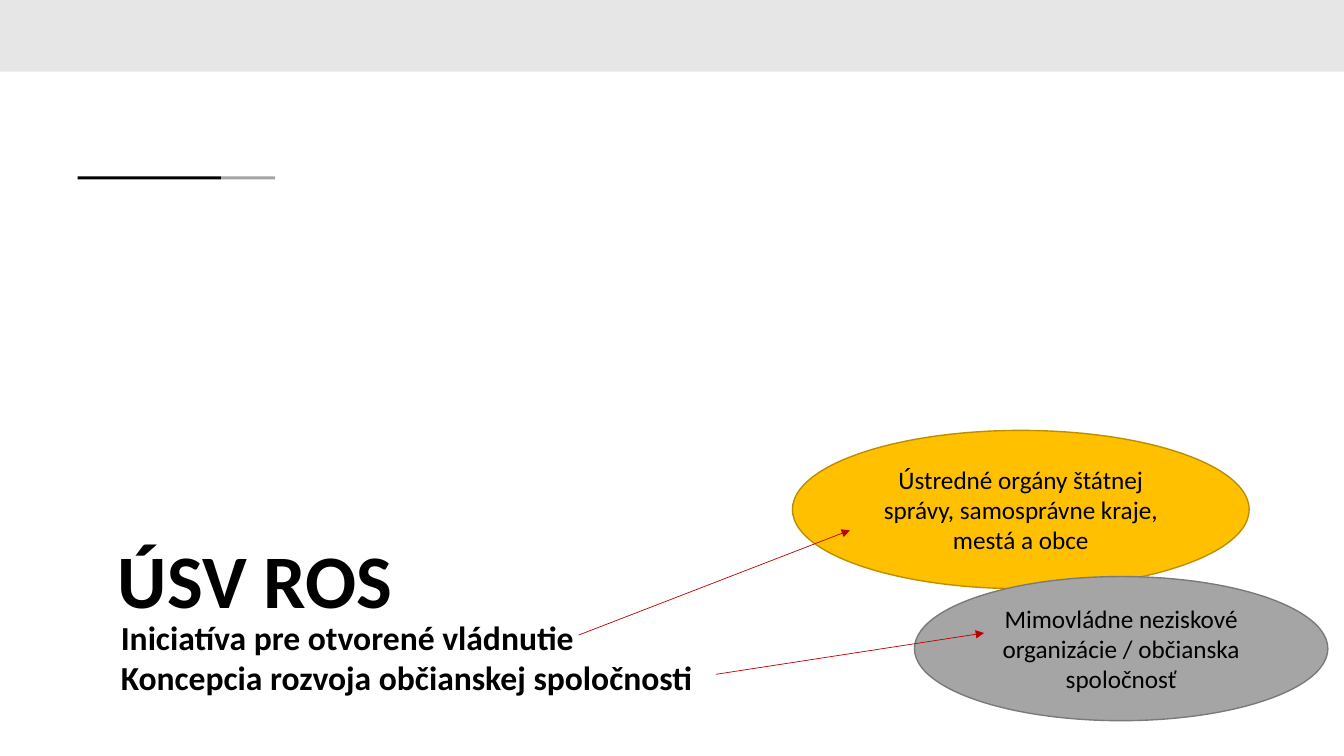
from lxml import etree
from pptx import Presentation
from pptx import util as u
from pptx.dml.color import RGBColor
from pptx.enum import shapes, text
from pptx.oxml.ns import qn

BLACK, GREY, PALE = "000000", "A5A5A5", "E7E6E6"
AMBER, RED = "FFC000", "C00000"


def color(value):
    return RGBColor.from_string(value)


def write(frame, lines, size, bold=False, align=text.PP_ALIGN.LEFT, spacing=None,
          font="Calibri", ink=BLACK):
    """Fill a text frame with one paragraph per line."""
    frame.word_wrap = True
    for index, line in enumerate(lines):
        para = frame.paragraphs[0] if index == 0 else frame.add_paragraph()
        para.alignment = align
        if spacing:
            para.line_spacing = spacing
        span = para.add_run()
        span.text = line
        span.font.name = font
        span.font.size = u.Pt(size)
        span.font.bold = bold
        span.font.color.rgb = color(ink)


class SlideBuilder:
    """Holds the line widths and the page being drawn."""

    outline_width = u.Pt(1)
    arrow_width = u.Pt(0.5)

    def __init__(self, page):
        self.page = page

    def shape(self, kind, left, top, width, height, fill, outline=None):
        shape = self.page.shapes.add_shape(
            kind, u.Inches(left), u.Inches(top), u.Inches(width), u.Inches(height))
        shape.shadow.inherit = False
        shape.fill.solid()
        shape.fill.fore_color.rgb = color(fill)
        if outline:
            shape.line.color.rgb = color(outline)
            shape.line.width = self.outline_width
        else:
            shape.line.fill.background()
        return shape

    def bar(self, left, top, width, height, fill):
        return self.shape(shapes.MSO_SHAPE.RECTANGLE, left, top, width, height, fill)

    def bubble(self, words, left, top, width, height, fill, outline):
        oval = self.shape(shapes.MSO_SHAPE.OVAL, left, top, width, height, fill, outline)
        oval.text_frame.vertical_anchor = text.MSO_ANCHOR.MIDDLE
        write(oval.text_frame, [words], 18, align=text.PP_ALIGN.CENTER)

    def textbox(self, lines, left, top, width, height, inset=None, **style):
        box = self.page.shapes.add_textbox(
            u.Inches(left), u.Inches(top), u.Inches(width), u.Inches(height))
        frame = box.text_frame
        if inset is not None:
            frame.margin_left = frame.margin_right = u.Inches(inset)
            frame.margin_top = frame.margin_bottom = u.Inches(inset)
        write(frame, lines, **style)

    def arrow(self, start, end):
        arrow = self.page.shapes.add_connector(
            shapes.MSO_CONNECTOR.STRAIGHT, *(u.Inches(value) for value in start + end))
        arrow.line.color.rgb = color(RED)
        arrow.line.width = self.arrow_width
        outline = arrow.line._get_or_add_ln()
        etree.SubElement(outline, qn("a:tailEnd"), type="triangle")
        etree.SubElement(arrow._element.spPr, qn("a:effectLst"))


def main():
    deck = Presentation()
    deck.slide_width, deck.slide_height = u.Inches(13.33), u.Inches(7.5)
    slide = SlideBuilder(deck.slides.add_slide(deck.slide_layouts[6]))

    slide.bar(0, 0, 13.33, 0.71, PALE)
    slide.bar(2.19, 1.75, 0.54, 0.03, GREY)
    slide.bar(0.77, 1.75, 1.42, 0.03, BLACK)

    slide.textbox(["ÚSV ROS"], 1.04, 5.26, 11.36, 1.02, inset=0.13,
                  size=54, bold=True, spacing=0.9)
    slide.textbox(["Iniciatíva pre otvorené vládnutie",
                   "Koncepcia rozvoja občianskej spoločnosti"],
                  1.1, 6.07, 10.5, 0.91, size=24, bold=True)

    slide.bubble("Ústredné orgány štátnej správy, samosprávne kraje, mestá a obce",
                 7.86, 4.27, 4.53, 1.57, AMBER, "BD8E00")
    slide.bubble("Mimovládne neziskové organizácie / občianska spoločnosť",
                 9.07, 5.72, 4.1, 1.43, GREY, "7A7A7A")

    slide.arrow((7.1, 6.69), (9.76, 6.28))
    slide.arrow((5.74, 6.3), (8.43, 5.26))

    deck.save("out.pptx")


if __name__ == "__main__":
    main()
